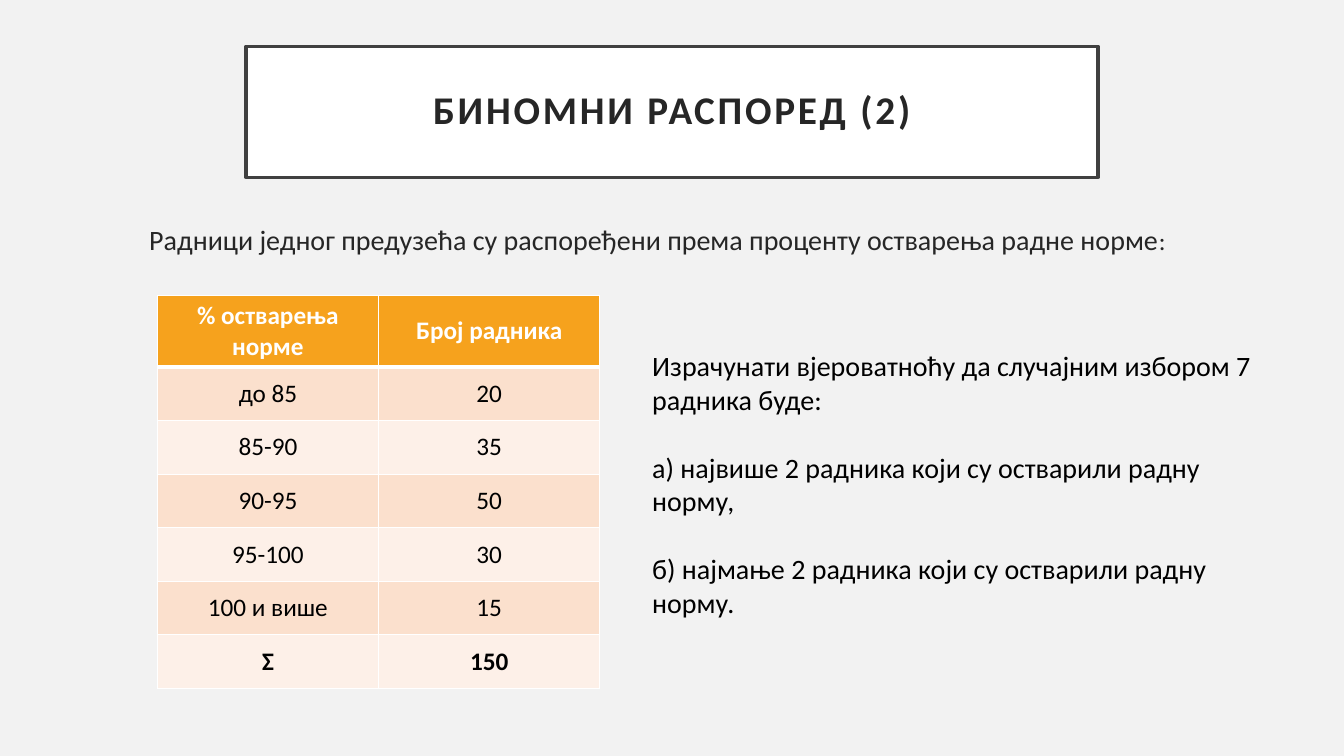
from dataclasses import dataclass

from lxml import etree
from pptx import Presentation
from pptx import util as u
from pptx.dml.color import RGBColor
from pptx.enum import text
from pptx.oxml.ns import qn


@dataclass(frozen=True)
class Theme:
    font: str = "Calibri"
    background: str = "F2F2F2"
    white: str = "FFFFFF"
    black: str = "000000"
    ink: str = "262626"
    frame: str = "404040"
    header: str = "F6A21D"
    bands: tuple = ("FBE0CD", "FDF0E8")
    title_size: int = 28
    body_size: int = 20
    table_size: int = 18


WORKERS = [
    ("% остварења норме", "Број радника"),
    ("до 85", "20"),
    ("85-90", "35"),
    ("90-95", "50"),
    ("95-100", "30"),
    ("100 и више", "15"),
    ("Σ", "150"),
]
QUESTIONS = [
    "Израчунати вјероватноћу да случајним избором 7 радника буде:",
    "а) највише 2 радника који су остварили радну норму,",
    "б) најмање 2 радника који су остварили радну норму.",
]


def rgb(value):
    return RGBColor.from_string(value)


def apply(target, formats):
    for name, value in formats.items():
        setattr(target, name, value)


def place(shape, left, top, width, height):
    box = dict(left=left, top=top, width=width, height=height)
    apply(shape, {name: u.Inches(value) for name, value in box.items()})


class SlideBuilder:
    def __init__(self, presentation, theme):
        self.theme = theme
        self.slide = presentation.slides.add_slide(presentation.slide_layouts[1])
        fill = self.slide.background.fill
        fill.solid()
        fill.fore_color.rgb = rgb(theme.background)

    def add_run(self, paragraph, wording, size, color, bold=False):
        run = paragraph.add_run()
        run.text = wording
        apply(run.font, dict(name=self.theme.font, size=u.Pt(size), bold=bold))
        run.font.color.rgb = rgb(color)
        return run

    def title(self, wording, box):
        theme, shape = self.theme, self.slide.shapes.title
        place(shape, *box)
        shape.fill.solid()
        shape.fill.fore_color.rgb = rgb(theme.white)
        shape.line.color.rgb = rgb(theme.frame)
        shape.line.width = u.Pt(2.5)
        frame = shape.text_frame
        margins = ("margin_left", "margin_top", "margin_right", "margin_bottom")
        apply(frame, dict.fromkeys(margins, u.Inches(0.2)))
        apply(frame, dict(vertical_anchor=text.MSO_ANCHOR.MIDDLE,
                          auto_size=text.MSO_AUTO_SIZE.NONE))
        paragraph = frame.paragraphs[0]
        apply(paragraph, dict(alignment=text.PP_ALIGN.CENTER, line_spacing=0.9))
        run = self.add_run(paragraph, wording, theme.title_size, theme.ink, True)
        run._r.get_or_add_rPr().set("spc", "200")

    def body(self, wording, ending, box):
        """Fill the body placeholder with one unbulleted line."""
        theme, shape = self.theme, self.slide.placeholders[1]
        place(shape, *box)
        shape.text_frame.auto_size = text.MSO_AUTO_SIZE.NONE
        paragraph = shape.text_frame.paragraphs[0]
        paragraph.space_before = u.Pt(0)
        properties = paragraph._p.get_or_add_pPr()
        for name in ("marL", "indent"):
            properties.set(name, "0")
        etree.SubElement(properties, qn("a:buNone"))
        self.add_run(paragraph, wording, theme.body_size, theme.ink)
        self.add_run(paragraph, ending, theme.table_size, theme.ink)

    def text_box(self, paragraphs, box):
        theme = self.theme
        frame = self.slide.shapes.add_textbox(*map(u.Inches, box)).text_frame
        frame.word_wrap = True
        for index, wording in enumerate(paragraphs):
            paragraph = frame.add_paragraph() if index else frame.paragraphs[0]
            paragraph.space_before = u.Pt(24.4 if index else 0)
            self.add_run(paragraph, wording, theme.body_size, theme.black)

    def borders(self, cell, **widths):
        """Draw white cell borders, 1 pt unless a side has its own width."""
        properties = cell._tc.get_or_add_tcPr()
        for index, side in enumerate("LRTB"):
            line = etree.Element(qn(f"a:ln{side}"), w=str(u.Pt(widths.get(side, 1))))
            fill = etree.SubElement(line, qn("a:solidFill"))
            etree.SubElement(fill, qn("a:srgbClr"), val=self.theme.white)
            properties.insert(index, line)

    def table(self, rows, box, header_height):
        theme = self.theme
        table = self.slide.shapes.add_table(
            len(rows), len(rows[0]), *map(u.Inches, box)).table
        row_height = (box[3] - header_height) / (len(rows) - 1)
        for row_index, values in enumerate(rows):
            is_header = row_index == 0
            is_total = row_index == len(rows) - 1
            table.rows[row_index].height = u.Inches(
                header_height if is_header else row_height)
            color = theme.white if is_header else theme.black
            fill = theme.header if is_header else theme.bands[(row_index - 1) % 2]
            widths = {0: {"B": 3}, 1: {"T": 3}}.get(row_index, {})
            for column_index, value in enumerate(values):
                cell = table.cell(row_index, column_index)
                cell.fill.solid()
                cell.fill.fore_color.rgb = rgb(fill)
                cell.vertical_anchor = text.MSO_ANCHOR.MIDDLE
                self.borders(cell, **widths)
                paragraph = cell.text_frame.paragraphs[0]
                paragraph.alignment = text.PP_ALIGN.CENTER
                self.add_run(paragraph, value, theme.table_size, color,
                             is_header or is_total)


def main():
    presentation = Presentation()
    apply(presentation, dict(slide_width=u.Inches(13.33), slide_height=u.Inches(7.5)))
    builder = SlideBuilder(presentation, Theme())
    builder.title("БИНОМНИ РАСПОРЕД (2)", (2.44, 0.46, 8.45, 1.3))
    builder.body("Радници једног предузећа су распоређени према проценту "
                 "остварења радне норме", ":", (1.38, 2.16, 10.58, 4.88))
    builder.table(WORKERS, (1.56, 2.93, 4.39, 3.89), header_height=0.7)
    builder.text_box(QUESTIONS, (6.37, 3.41, 6.19, 2.79))
    presentation.save("out.pptx")


if __name__ == "__main__":
    main()
